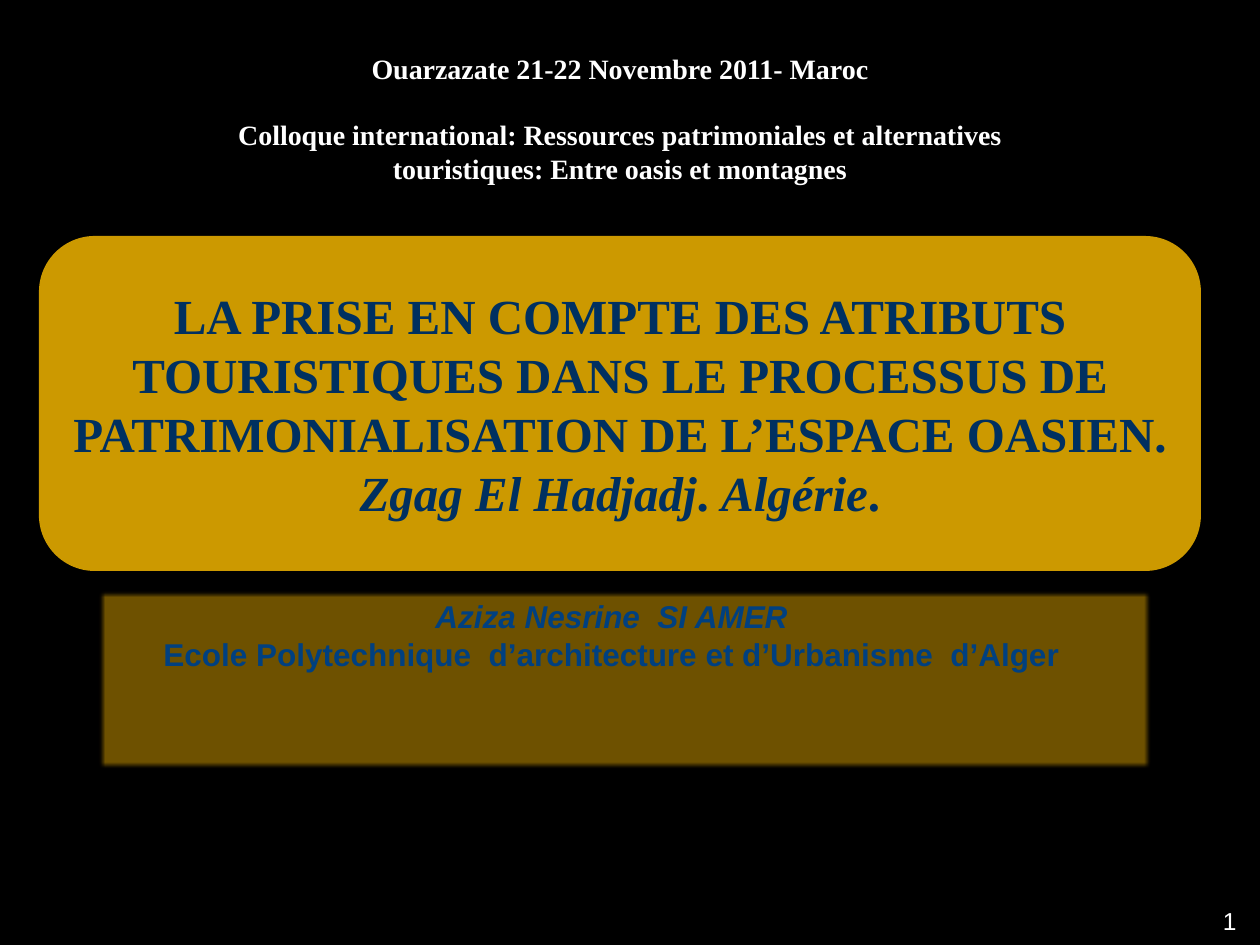
from lxml import etree
from pptx import Presentation
from pptx.dml.color import RGBColor
from pptx.enum.shapes import MSO_SHAPE
from pptx.enum.text import MSO_ANCHOR, PP_ALIGN
from pptx.oxml.ns import qn
from pptx.util import Pt

RECT, ROUND = MSO_SHAPE.RECTANGLE, MSO_SHAPE.ROUNDED_RECTANGLE
MID, TOP = MSO_ANCHOR.MIDDLE, MSO_ANCHOR.TOP
CENTER, RIGHT = PP_ALIGN.CENTER, PP_ALIGN.RIGHT
PX = 914400 // 126

THEME = {
    "back": "000000", "gold": "FFC000", "white": "FFFFFF",
    "navy": "003060", "blue": "004080",
    "serif": "Times New Roman", "sans": "Arial",
    "title": 28, "author": 18, "head": 16, "number": 14,
}


def add_panel(kind, box, alpha):
    shape = slide.shapes.add_shape(kind, *[n * PX for n in box])
    shape.shadow.inherit = False
    shape.line.fill.background()
    shape.fill.solid()
    shape.fill.fore_color.rgb = RGBColor.from_string(THEME["gold"])
    color = shape.fill._xPr.find(qn("a:solidFill"))[0]
    etree.SubElement(color, qn("a:alpha")).set("val", str(alpha * 1000))
    return shape


def write(shape, lines, size, face, color, bold=True, align=CENTER, anchor=TOP):
    frame = shape.text_frame
    frame.word_wrap = True
    frame.vertical_anchor = anchor
    frame.text = "\n".join(lines)
    for para in frame.paragraphs:
        para.alignment = align
        for run in para.runs:
            run.font.size = Pt(THEME[size])
            run.font.name = THEME[face]
            run.font.bold = bold
            run.font.color.rgb = RGBColor.from_string(THEME[color])
    return frame.paragraphs


deck = Presentation()
deck.slide_width, deck.slide_height = 1260 * PX, 945 * PX
slide = deck.slides.add_slide(deck.slide_layouts[6])
slide.background.fill.solid()
slide.background.fill.fore_color.rgb = RGBColor.from_string(THEME["back"])

# Author panel with soft edges
panel = add_panel(RECT, (98, 591, 1053, 178), 43)
effects = panel._element.spPr.find(qn("a:effectLst"))
etree.SubElement(effects, qn("a:softEdge")).set("rad", str(4 * PX))
paras = write(panel, [
    "Aziza Nesrine  SI AMER",
    "Ecole Polytechnique  d’architecture et d’Urbanisme  d’Alger",
], "author", "sans", "blue")
paras[0].runs[0].font.italic = True
paras[0]._p.get_or_add_pPr().set("marR", str(26 * PX))

# Title panel
panel = add_panel(ROUND, (39, 236, 1162, 335), 80)
paras = write(panel, [
    "LA PRISE EN COMPTE DES ATRIBUTS TOURISTIQUES DANS LE PROCESSUS DE "
    "PATRIMONIALISATION DE L’ESPACE OASIEN.",
    "",
], "title", "serif", "navy", anchor=MID)
for text, slant in (("Zgag El Hadjadj", True), (". ", False),
                    ("Algérie", True), (".", False)):
    run = paras[1].add_run()
    run.text = text
    run.font.size = Pt(THEME["title"])
    run.font.name = THEME["serif"]
    run.font.bold = True
    run.font.italic = slant
    run.font.color.rgb = RGBColor.from_string(THEME["navy"])

# Slide number
box = slide.shapes.add_textbox(*[n * PX for n in (1131, 900, 118, 45)])
write(box, ["1"], "number", "sans", "white", bold=False, align=RIGHT)

# Conference heading
box = slide.shapes.add_textbox(*[n * PX for n in (213, 45, 814, 149)])
paras = write(box, [
    "Ouarzazate 21-22 Novembre 2011- Maroc",
    "Colloque international: Ressources patrimoniales et alternatives "
    "touristiques: Entre oasis et montagnes",
], "head", "serif", "white")
paras[1].space_before = Pt(19)

deck.save("out.pptx")
